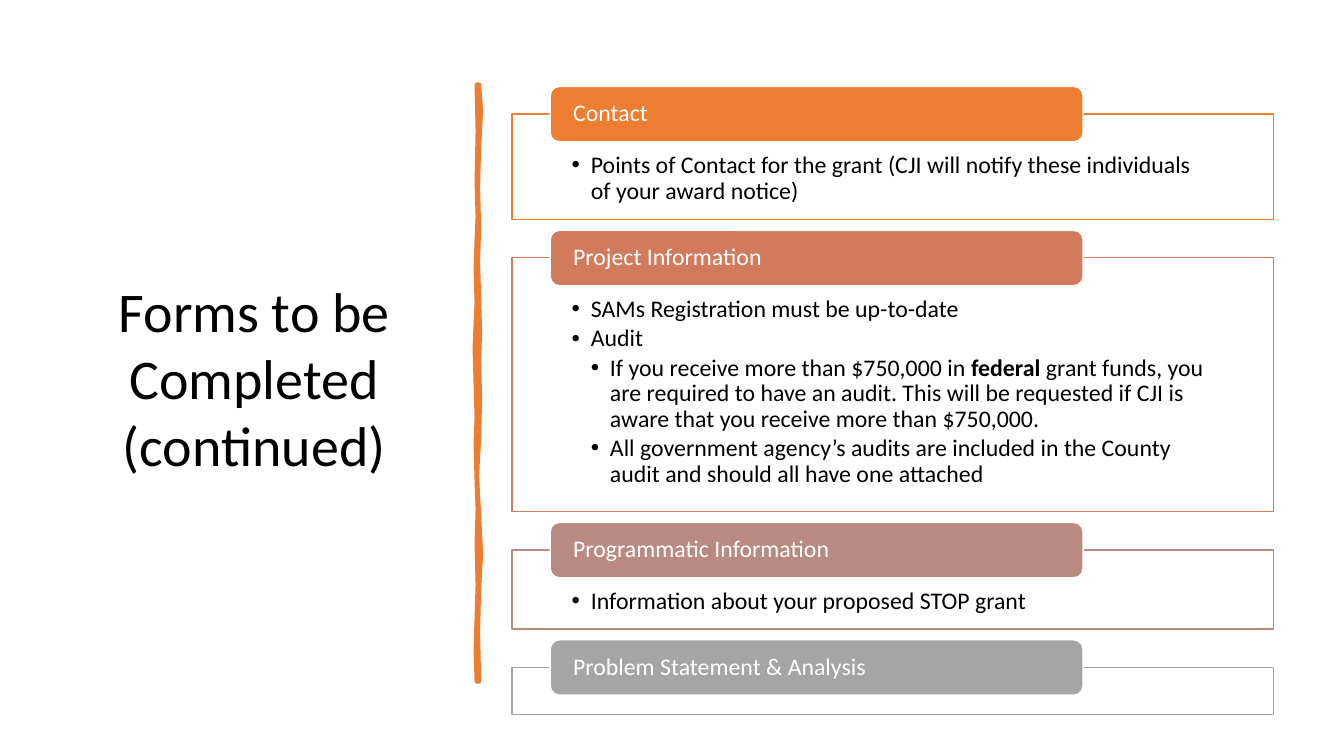
from dataclasses import dataclass

from lxml.etree import SubElement
from pptx import Presentation
from pptx.dml.color import RGBColor
from pptx.enum.shapes import MSO_SHAPE as Preset
from pptx.enum.text import MSO_ANCHOR as Anchor, MSO_AUTO_SIZE as AutoSize, PP_ALIGN as Align
from pptx.oxml.ns import qn
from pptx.util import Inches, Pt

WIDTH, HEIGHT = Inches(13.33), Inches(7.5)
FONT = "Calibri"
ORANGE, WHITE, BLACK = "ED7D31", "FFFFFF", "000000"
GAP, PILL_HEIGHT, PILL_RISE = 5.03, 7.33, 3.63

PANELS = [
    ("Contact", ORANGE, 14, 1, [
        (0, ["Points of Contact for the grant (CJI will notify these individuals of your award notice)"]),
    ]),
    ("Project Information", "D17B5C", 33.6, 2, [
        (0, ["SAMs Registration must be up-to-date"]),
        (0, ["Audit"]),
        (1, ["If you receive more than $750,000 in ", "federal",
             " grant funds, you are required to have an audit. This will be requested"
             " if CJI is aware that you receive more than $750,000."]),
        (1, ["All government agency’s audits are included in the County audit"
             " and should all have one attached"]),
    ]),
    ("Programmatic Information", "B98A82", 10.5, 4, [
        (0, ["Information about your proposed STOP grant"]),
    ]),
    ("Problem Statement & Analysis", "A5A5A5", 6.27, None, []),
]

RIGHT_EDGE = [
    (4.75, 0.84), (4.77, 1.1), (4.75, 1.46), (4.74, 1.85), (4.75, 2.26), (4.74, 2.6),
    (4.75, 2.94), (4.76, 3.3), (4.75, 3.56), (4.76, 3.95), (4.75, 4.36), (4.73, 4.72),
    (4.75, 5.1), (4.77, 5.5), (4.75, 5.84), (4.74, 6.27), (4.75, 6.76),
]
LEFT_EDGE = [
    (4.73, 6.76), (4.72, 6.44), (4.73, 6.13), (4.74, 5.8), (4.73, 5.39), (4.74, 5.05),
    (4.73, 4.77), (4.72, 4.4), (4.73, 4.15), (4.71, 3.45), (4.73, 3), (4.72, 2.69),
    (4.73, 2.38), (4.74, 2.15), (4.73, 1.81), (4.74, 1.3), (4.73, 0.84),
]


@dataclass
class Box:
    """A region of the slide, in percent of its width and height."""
    left: float
    top: float
    width: float
    height: float

    def place(self, shape):
        """Move a shape onto this region."""
        shape.left, shape.top, shape.width, shape.height = self.lengths()

    def lengths(self):
        """Return left, top, width and height as slide lengths."""
        return (int(WIDTH * self.left / 100), int(HEIGHT * self.top / 100),
                int(WIDTH * self.width / 100), int(HEIGHT * self.height / 100))


def color(hex_string):
    """Turn a hex string into a colour."""
    return RGBColor.from_string(hex_string)


def paint(shape, fill, line, weight):
    """Give a shape a solid fill and outline."""
    shape.fill.solid()
    shape.fill.fore_color.rgb = color(fill)
    shape.line.color.rgb = color(line)
    shape.line.width = Pt(weight)


def set_font(para, size, hex_string):
    """Set the font of a whole paragraph."""
    para.font.name = FONT
    para.font.size = Pt(size)
    para.font.bold = False
    para.font.color.rgb = color(hex_string)


def set_insets(frame, left, top, right, bottom):
    """Set the text margins in inches."""
    frame.margin_left, frame.margin_top = Inches(left), Inches(top)
    frame.margin_right, frame.margin_bottom = Inches(right), Inches(bottom)


def add_bullet(para, level):
    """Give a paragraph a hanging bullet."""
    props = para._p.get_or_add_pPr()
    props.set("marL", str(Inches(0.19 * (level + 1))))
    props.set("indent", str(Inches(-0.19)))
    SubElement(props, qn("a:buFont")).set("typeface", "Arial")
    SubElement(props, qn("a:buChar")).set("char", "•")


def fill_list(frame, items):
    """Write the bulleted items of a panel."""
    frame.word_wrap = True
    frame.auto_size = AutoSize.NONE
    frame.vertical_anchor = Anchor.TOP
    set_insets(frame, 0.59, 0.39, 0.59, 0.13)
    for index, (level, pieces) in enumerate(items):
        para = frame.paragraphs[0] if index == 0 else frame.add_paragraph()
        para.level = level
        para.alignment = Align.LEFT
        para.line_spacing = 0.9
        para.space_before = Pt(0)
        para.space_after = Pt(2.5)
        add_bullet(para, level)
        set_font(para, 17, BLACK)
        for position, piece in enumerate(pieces):
            span = para.add_run()
            span.text = piece
            if position == 1:
                span.font.bold = True


def add_title(page, box):
    """Place the slide title."""
    title = page.shapes.title
    box.place(title)
    frame = title.text_frame
    frame.text = "Forms to be Completed (continued)"
    frame.word_wrap = True
    frame.auto_size = AutoSize.NONE
    frame.vertical_anchor = Anchor.TOP
    para = frame.paragraphs[0]
    para.alignment = Align.CENTER
    set_font(para, 40, BLACK)


def add_divider(page):
    """Draw the hand-drawn vertical stroke."""
    start, *rest = [(Inches(x), Inches(y)) for x, y in RIGHT_EDGE + LEFT_EDGE]
    builder = page.shapes.build_freeform(*start)
    builder.add_line_segments(rest, close=True)
    stroke = builder.convert_to_shape()
    stroke.shadow.inherit = False
    paint(stroke, ORANGE, ORANGE, 3.25)


def add_panel(page, box, heading, hue, slot, items):
    """Draw one framed list with its heading pill."""
    if items:
        body = page.placeholders[slot]
        box.place(body)
        fill_list(body.text_frame, items)
    else:
        body = page.shapes.add_shape(Preset.RECTANGLE, *box.lengths())
        body.shadow.inherit = False
    paint(body, WHITE, hue, 1)

    pill_box = Box(box.left + box.width * 0.05, box.top - PILL_RISE, box.width * 0.7, PILL_HEIGHT)
    pill = page.shapes.add_shape(Preset.ROUNDED_RECTANGLE, *pill_box.lengths())
    pill.shadow.inherit = False
    paint(pill, hue, WHITE, 1)
    frame = pill.text_frame
    frame.text = heading
    frame.word_wrap = True
    frame.vertical_anchor = Anchor.MIDDLE
    set_insets(frame, 0.2, 0, 0.2, 0)
    para = frame.paragraphs[0]
    para.alignment = Align.LEFT
    para.line_spacing = 0.9
    set_font(para, 17, WHITE)


def add_panels(page, left, top, width):
    """Stack the panels with equal gaps."""
    for heading, hue, height, slot, items in PANELS:
        add_panel(page, Box(left, top, width, height), heading, hue, slot, items)
        top += height + GAP


def main():
    """Build and save the deck."""
    deck = Presentation()
    deck.slide_width, deck.slide_height = WIDTH, HEIGHT
    page = deck.slides.add_slide(deck.slide_layouts.get_by_name("Comparison"))
    add_title(page, Box(4.95, 35.87, 27.91, 28.27))
    add_divider(page)
    add_panels(page, 38.11, 15.07, 56.64)
    for holder in list(page.placeholders):
        if not holder.text_frame.text:
            holder._element.getparent().remove(holder._element)
    deck.save("out.pptx")


if __name__ == "__main__":
    main()
